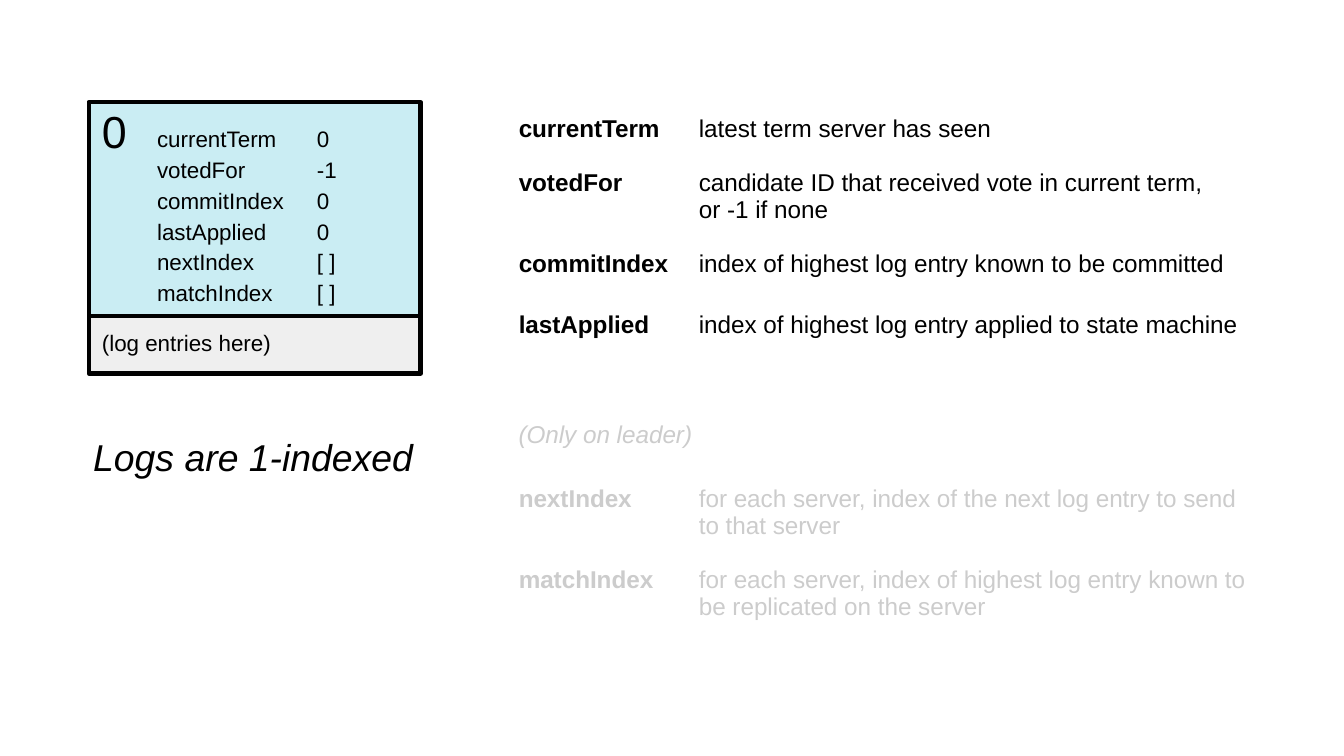
from pptx import Presentation
from pptx import util as u
from pptx.dml.color import RGBColor
from pptx.enum import shapes, text
from pptx.oxml.ns import qn
from lxml import etree

THEME = {
    "font": "Arial",
    "ink": "000000",
    "muted": "CCCCCC",
    "state": "CAEDF3",
    "log": "EFEFEF",
    "grid": "FFFFFF",
    "small": 12,
    "body": 13,
    "note": 20,
    "server": 24,
    "outline": 2.25,
    "grid_width": 1.5,
}
INSET = 0.1

SERVER_ID = "0"
STATE = [
    ("currentTerm", "0"),
    ("votedFor", "-1"),
    ("commitIndex", "0"),
    ("lastApplied", "0"),
    ("nextIndex", "[ ]"),
    ("matchIndex", "[ ]"),
]
LOG_TEXT = "(log entries here)"
NOTE = "Logs are 1-indexed"
LEADER_LABEL = "(Only on leader)"
COLUMNS = (1.34, 4.37)
TABLES = [
    {
        "top": 0.76,
        "color_name": "ink",
        "heights": (0.3, 0.45, 0.45, 0.45),
        "rows": [
            ("currentTerm", ["latest term server has seen"]),
            ("votedFor", ["candidate ID that received vote in current term,",
                          "or -1 if none"]),
            ("commitIndex", ["index of highest log entry known to be committed"]),
            ("lastApplied", ["index of highest log entry applied to state machine"]),
        ],
    },
    {
        "top": 3.51,
        "color_name": "muted",
        "heights": (0.45, 0.59),
        "rows": [
            ("nextIndex", ["for each server, index of the next log entry to send "
                           "to that server"]),
            ("matchIndex", ["for each server, index of highest log entry known to "
                            "be replicated on the server"]),
        ],
    },
]


def color(name):
    return RGBColor.from_string(THEME[name])


def write(frame, lines, size, ink="ink", bold=False, italic=False,
          align=text.PP_ALIGN.LEFT, spacing=1.0):
    for index, line in enumerate(lines):
        para = frame.paragraphs[0] if index == 0 else frame.add_paragraph()
        para.alignment = align
        para.line_spacing = spacing
        span = para.add_run()
        span.text = line
        span.font.name = THEME["font"]
        span.font.size = u.Pt(THEME[size])
        span.font.color.rgb = color(ink)
        span.font.bold = bold
        span.font.italic = italic


def set_margins(target):
    target.margin_left = target.margin_right = u.Inches(INSET)
    target.margin_top = target.margin_bottom = u.Inches(INSET)


def set_up(frame, anchor=text.MSO_ANCHOR.TOP):
    frame.word_wrap = True
    frame.auto_size = text.MSO_AUTO_SIZE.NONE
    frame.vertical_anchor = anchor
    set_margins(frame)


def add_text(parent, place, lines, size, anchor=text.MSO_ANCHOR.TOP, **style):
    box = parent.add_textbox(*map(u.Inches, place))
    set_up(box.text_frame, anchor)
    write(box.text_frame, lines, size, **style)


def add_panel(parent, place, fill):
    panel = parent.add_shape(shapes.MSO_SHAPE.RECTANGLE, *map(u.Inches, place))
    panel.shadow.inherit = False
    panel.fill.solid()
    panel.fill.fore_color.rgb = color(fill)
    panel.line.color.rgb = color("ink")
    panel.line.width = u.Pt(THEME["outline"])
    set_up(panel.text_frame)
    return panel


def add_borders(cell):
    properties = cell._tc.get_or_add_tcPr()
    for position, side in enumerate(("lnL", "lnR", "lnT", "lnB")):
        line = etree.Element(qn("a:" + side), w=str(u.Pt(THEME["grid_width"])))
        fill = etree.SubElement(line, qn("a:solidFill"))
        etree.SubElement(fill, qn("a:srgbClr"), val=THEME["grid"])
        properties.insert(position, line)


def add_definitions(page, top, color_name, heights, rows):
    table = page.shapes.add_table(
        len(rows), len(COLUMNS), u.Inches(3.76), u.Inches(top),
        u.Inches(sum(COLUMNS)), u.Inches(sum(heights))).table
    table.first_row = table.horz_banding = False
    for column, width in zip(table.columns, COLUMNS):
        column.width = u.Inches(width)
    for row, height, (name, meaning) in zip(table.rows, heights, rows):
        row.height = u.Inches(height)
        for cell, lines, bold in zip(row.cells, ([name], meaning), (True, False)):
            set_margins(cell)
            cell.fill.background()
            add_borders(cell)
            write(cell.text_frame, lines, "body", color_name, bold=bold)


def add_server(page):
    server = page.shapes.add_group_shape().shapes
    add_panel(server, (0.66, 0.76, 2.47, 1.62), "state")
    names, values = zip(*STATE)
    add_text(server, (1.07, 0.8, 1.28, 1.48), names, "small", spacing=1.15)
    log = add_panel(server, (0.66, 2.35, 2.47, 0.43), "log")
    write(log.text_frame, [LOG_TEXT], "small")
    add_text(server, (0.66, 0.67, 0.71, 0.59), [SERVER_ID], "server")
    add_text(server, (2.26, 0.8, 0.77, 1.48), values, "small", spacing=1.15)


def add_note(page):
    note = page.placeholders[1]
    note.left, note.top, note.width, note.height = map(
        u.Inches, (0.32, 3.13, 3.13, 0.57))
    set_up(note.text_frame)
    write(note.text_frame, [NOTE], "note", italic=True, align=text.PP_ALIGN.CENTER)
    para = note.text_frame.paragraphs[0]
    para.space_before = u.Pt(0)
    properties = para._p.get_or_add_pPr()
    properties.set("marL", "0")
    properties.set("indent", "0")
    etree.SubElement(properties, qn("a:buNone"))


def main():
    deck = Presentation()
    deck.slide_width = u.Inches(10)
    deck.slide_height = deck.slide_width * 9 // 16
    page = deck.slides.add_slide(deck.slide_layouts[1])
    title = page.shapes.title
    title.element.getparent().remove(title.element)
    add_server(page)
    for definitions in TABLES:
        add_definitions(page, **definitions)
    add_text(page.shapes, (3.76, 3.02, 1.59, 0.38), [LEADER_LABEL], "body",
             anchor=text.MSO_ANCHOR.MIDDLE, ink="muted", italic=True, spacing=1.15)
    add_note(page)
    deck.save("out.pptx")


if __name__ == "__main__":
    main()
